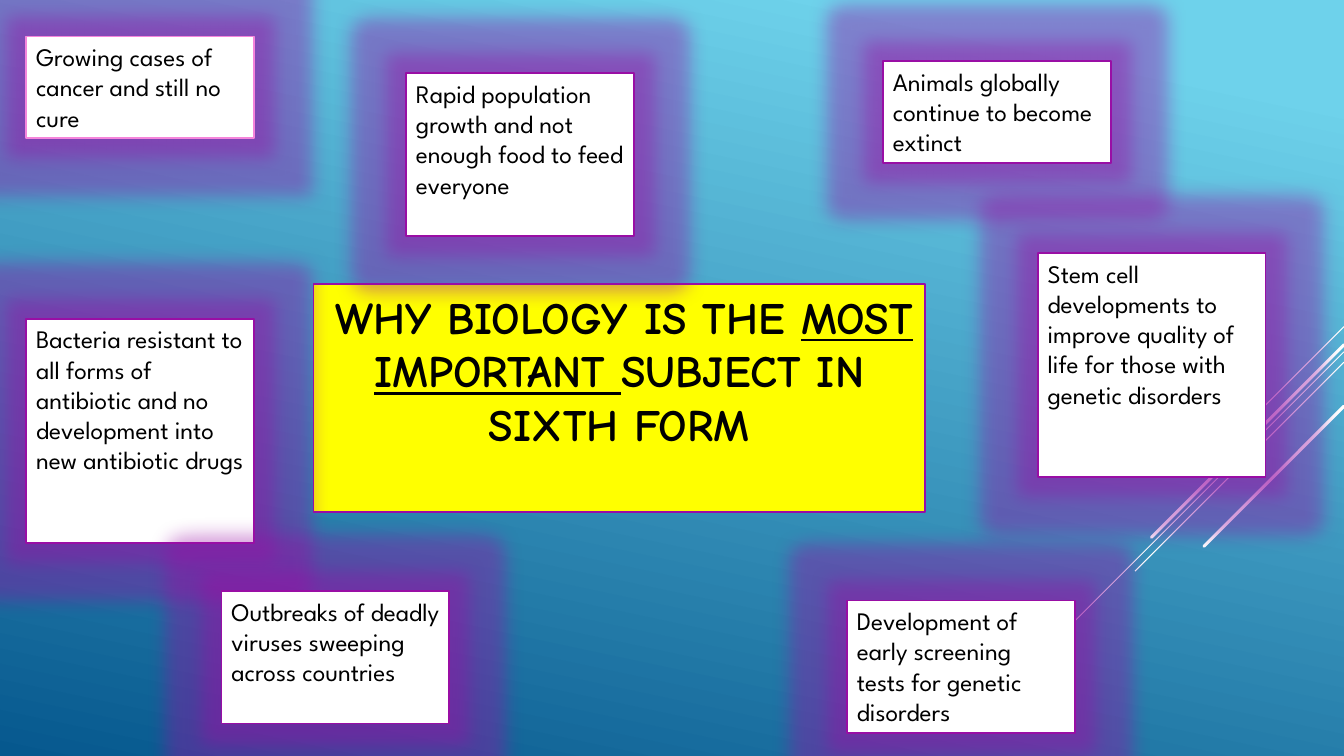
from typing import NamedTuple

from lxml import etree
from pptx import Presentation
from pptx import util as u
from pptx.dml.color import RGBColor
from pptx.enum import shapes, text
from pptx.oxml.ns import qn

COLOURS = {
    "sky": "6ED2EB",
    "deep": "06588E",
    "white": "FFFFFF",
    "black": "000000",
    "pink": "F585DB",
    "purple": "990EA5",
    "yellow": "FFFF00",
}
BODY_FONT = "League Spartan"
TITLE_FONT = "Comic Neue"
PAGE_WIDTH, PAGE_HEIGHT = 960, 540
REASON_WIDTH = 162.7
GLOW_RADIUS = 27


class Reason(NamedTuple):
    left: float
    top: float
    height: float
    wording: str
    border: str = "purple"


class Streak(NamedTuple):
    top: float
    run: float
    weight: float


class Span(NamedTuple):
    wording: str
    size: float = 32
    font: str = TITLE_FONT
    bold: bool = True
    underline: bool = False


REASONS = [
    Reason(18.7, 26, 72.7, "Growing cases of cancer and still no cure", "pink"),
    Reason(18.7, 227.7, 160, "Bacteria resistant to all forms of antibiotic and no "
           "development into new antibiotic drugs"),
    Reason(290, 52.3, 116.4, "Rapid population growth and not enough food to feed everyone"),
    Reason(630.7, 43.7, 72.7, "Animals globally continue to become extinct"),
    Reason(158.2, 422.3, 94.5, "Outbreaks of deadly viruses sweeping across countries"),
    Reason(741.2, 180.7, 160, "Stem cell developments to improve quality of life for "
           "those with genetic disorders"),
    Reason(605, 429, 94.5, "Development of early screening tests for genetic disorders"),
]
STREAKS = [
    Streak(233.3, 72, 0.75),
    Streak(251.3, 234.7, 0.75),
    Streak(258.7, 149.3, 0.75),
    Streak(246.3, 137.5, 2.25),
    Streak(290.2, 100, 2.25),
]
HEADLINE = [
    Span(" ", 28, BODY_FONT, False),
    Span("WHY BIOLOGY IS THE "),
    Span("MOST IMPORTANT ", underline=True),
    Span("SUBJECT IN SIXTH FORM"),
]


def colour(name: str) -> RGBColor:
    """Return the named colour."""
    return RGBColor.from_string(COLOURS[name])


def paint_background(page) -> None:
    """Fill the page with the blue gradient."""
    fill = page.background.fill
    fill.gradient()
    fill.gradient_angle = 258
    for stop, name, position in zip(fill.gradient_stops, ("sky", "deep"), (0.1, 1)):
        stop.color.rgb = colour(name)
        stop.position = position


def draw_streak(page, streak: Streak) -> None:
    """Draw a white diagonal from the right edge down to the left."""
    line = page.shapes.add_connector(
        shapes.MSO_CONNECTOR.STRAIGHT, u.Pt(PAGE_WIDTH), u.Pt(streak.top),
        u.Pt(PAGE_WIDTH - streak.run), u.Pt(streak.top + streak.run))
    line.line.color.rgb = colour("white")
    line.line.width = u.Pt(streak.weight)
    if streak.weight > 1:
        line.line._get_or_add_ln().set("cap", "rnd")
    etree.SubElement(line._element.spPr, qn("a:effectLst"))


def style_box(box, fill: str, border: str) -> None:
    """Give a box its fill, border and top-anchored wrapping text."""
    box.fill.solid()
    box.fill.fore_color.rgb = colour(fill)
    box.line.color.rgb = colour(border)
    box.line.width = u.Pt(1.25)
    frame = box.text_frame
    frame.word_wrap = True
    frame.auto_size = text.MSO_AUTO_SIZE.NONE
    frame.vertical_anchor = text.MSO_ANCHOR.TOP


def add_span(para, span: Span) -> None:
    """Append one formatted run to a paragraph."""
    run = para.add_run()
    run.text = span.wording
    run.font.name = span.font
    run.font.size = u.Pt(span.size)
    run.font.bold = span.bold
    run.font.underline = span.underline
    run.font.color.rgb = colour("black")


def add_glow(box) -> None:
    """Surround a box with a translucent purple glow."""
    box.shadow.inherit = False
    effects = box._element.spPr.find(qn("a:effectLst"))
    glow = etree.SubElement(effects, qn("a:glow"), rad=str(u.Pt(GLOW_RADIUS)))
    tint = etree.SubElement(glow, qn("a:srgbClr"), val=COLOURS["purple"])
    etree.SubElement(tint, qn("a:alpha"), val="40000")


def draw_reason(page, reason: Reason) -> None:
    """Draw one glowing white box with its reason."""
    box = page.shapes.add_shape(
        shapes.MSO_SHAPE.RECTANGLE, u.Pt(reason.left), u.Pt(reason.top),
        u.Pt(REASON_WIDTH), u.Pt(reason.height))
    style_box(box, "white", reason.border)
    add_glow(box)
    para = box.text_frame.paragraphs[0]
    para.alignment = text.PP_ALIGN.LEFT
    add_span(para, Span(reason.wording, 18, BODY_FONT, False))


def fill_title(page) -> None:
    """Turn the title placeholder into the yellow headline box."""
    box = page.shapes.title
    box.left, box.top = u.Pt(223.9), u.Pt(203)
    box.width, box.height = u.Pt(437), u.Pt(162.7)
    style_box(box, "yellow", "purple")
    para = box.text_frame.paragraphs[0]
    para.alignment = text.PP_ALIGN.CENTER
    for span in HEADLINE:
        add_span(para, span)


def main() -> None:
    """Build and save the slide."""
    deck = Presentation()
    deck.slide_width, deck.slide_height = u.Pt(PAGE_WIDTH), u.Pt(PAGE_HEIGHT)
    page = deck.slides.add_slide(deck.slide_layouts.get_by_name("Title Only"))
    paint_background(page)
    for streak in STREAKS:
        draw_streak(page, streak)
    for reason in REASONS:
        draw_reason(page, reason)
    fill_title(page)
    deck.save("out.pptx")


if __name__ == "__main__":
    main()
